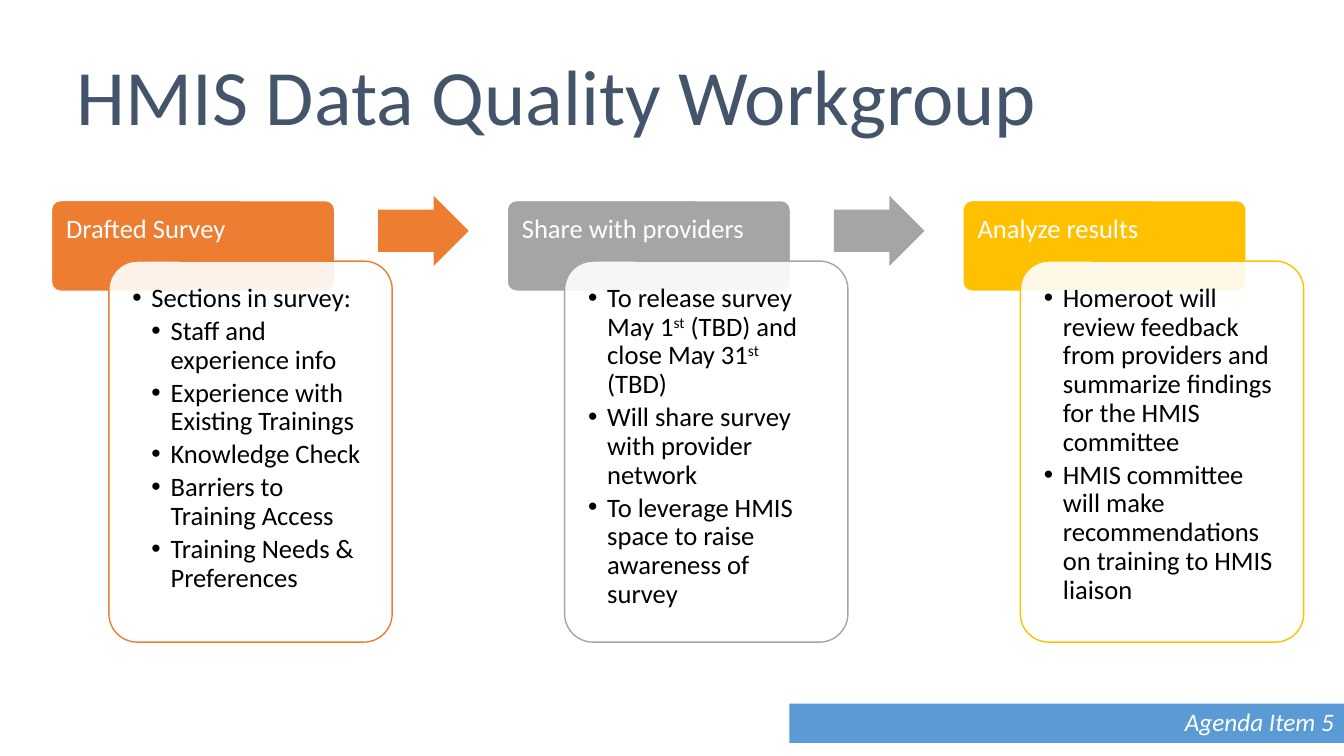
from lxml.etree import SubElement
from pptx import Presentation
from pptx.dml.color import RGBColor
from pptx.enum.shapes import MSO_SHAPE as Shape
from pptx.enum.text import MSO_ANCHOR as Anchor, PP_ALIGN as Align
from pptx.oxml.ns import qn
from pptx.util import Inches, Pt

FONT = "Calibri"
WHITE = RGBColor(0xFF, 0xFF, 0xFF)
BLACK = RGBColor(0x00, 0x00, 0x00)
SLATE = RGBColor(0x44, 0x54, 0x6A)
BLUE = RGBColor(0x5B, 0x9B, 0xD5)
ORANGE = RGBColor(0xED, 0x7D, 0x31)
GRAY = RGBColor(0xA5, 0xA5, 0xA5)
GOLD = RGBColor(0xFF, 0xC0, 0x00)

LEFT, STEP = 0.51, 4.52
HANG = 0.19

# Each point is (level, text); text between carets is superscript.
STAGES = [
    ("Drafted Survey", ORANGE, [
        (0, "Sections in survey:"),
        (1, "Staff and experience info"),
        (1, "Experience with Existing Trainings"),
        (1, "Knowledge Check"),
        (1, "Barriers to Training Access"),
        (1, "Training Needs & Preferences"),
    ]),
    ("Share with providers", GRAY, [
        (0, "To release survey May 1^st^ (TBD) and close May 31^st^ (TBD)"),
        (0, "Will share survey with provider network"),
        (0, "To leverage HMIS space to raise awareness of survey"),
    ]),
    ("Analyze results", GOLD, [
        (0, "Homeroot will review feedback from providers and "
            "summarize findings for the HMIS committee"),
        (0, "HMIS committee will make recommendations on training "
            "to HMIS liaison"),
    ]),
]


def add_box(slide, kind, box, fill, line=None):
    shape = slide.shapes.add_shape(kind, *map(Inches, box))
    shape.shadow.inherit = False
    shape.fill.solid()
    shape.fill.fore_color.rgb = fill
    if line is None:
        shape.line.fill.background()
    else:
        shape.line.color.rgb = line
        shape.line.width = Pt(1)
    return shape


def set_frame(shape, anchor, inset):
    frame = shape.text_frame
    frame.word_wrap = True
    frame.vertical_anchor = anchor
    frame.margin_left = frame.margin_right = Inches(inset)
    frame.margin_top = frame.margin_bottom = Inches(inset)
    return frame


def write(para, text, size, color, align=Align.LEFT, italic=False):
    """Fill a paragraph, raising the parts between carets."""
    para.alignment = align
    para.line_spacing = 0.9
    for i, part in enumerate(text.split("^")):
        run = para.add_run()
        run.text = part
        font = run.font
        font.name, font.size, font.italic = FONT, Pt(size), italic
        font.color.rgb = color
        if i % 2:
            run._r.get_or_add_rPr().set("baseline", "30000")


def set_bullet(para, level):
    para.level = level
    props = para._p.get_or_add_pPr()
    props.set("marL", str(Inches(HANG * (level + 1))))
    props.set("indent", str(-Inches(HANG)))
    SubElement(props, qn("a:buFont"), typeface="Arial")
    SubElement(props, qn("a:buChar"), char="•")


def add_title(slide, text):
    title = slide.shapes.title
    title.left, title.top = Inches(0.66), Inches(0.52)
    title.width, title.height = Inches(12.02), Inches(1.81)
    title.text_frame.word_wrap = True
    title.text_frame.vertical_anchor = Anchor.TOP
    write(title.text_frame.paragraphs[0], text, 56, SLATE)


def add_banner(slide, text):
    bar = add_box(slide, Shape.RECTANGLE, (7.83, 6.98, 5.5, 0.39), BLUE)
    frame = set_frame(bar, Anchor.MIDDLE, 0.1)
    frame.margin_top = frame.margin_bottom = 0
    write(frame.paragraphs[0], text, 18, WHITE, Align.RIGHT, True)


def add_header(slide, left, text, color):
    box = (left, 1.99, 2.81, 0.9)
    head = add_box(slide, Shape.ROUNDED_RECTANGLE, box, color, WHITE)
    head.adjustments[0] = 0.1
    frame = set_frame(head, Anchor.TOP, 0.12)
    write(frame.paragraphs[0], text, 19, WHITE)


def add_card(slide, left, points, color):
    box = (left, 2.59, 2.81, 3.78)
    card = add_box(slide, Shape.ROUNDED_RECTANGLE, box, WHITE, color)
    card.adjustments[0] = 0.1
    tint = card.fill._xPr.find(qn("a:solidFill"))[0]
    SubElement(tint, qn("a:alpha"), val="90000")
    frame = set_frame(card, Anchor.TOP, 0.15)
    for i, (level, text) in enumerate(points):
        para = frame.add_paragraph() if i else frame.paragraphs[0]
        set_bullet(para, level)
        para.space_after = Pt(3)
        write(para, text, 19, BLACK)


def add_arrow(slide, left, color):
    arrow = add_box(slide, Shape.RIGHT_ARROW, (left, 1.94, 0.9, 0.7), color)
    arrow.adjustments[0] = 0.6
    arrow.adjustments[1] = 0.5


def main():
    deck = Presentation()
    deck.slide_width, deck.slide_height = Inches(13.33), Inches(7.5)
    slide = deck.slides.add_slide(deck.slide_layouts[5])
    add_title(slide, "HMIS Data Quality Workgroup")
    add_banner(slide, "Agenda Item 5")
    for i, (name, color, points) in enumerate(STAGES):
        left = LEFT + i * STEP
        add_header(slide, left, name, color)
        add_card(slide, left + 0.57, points, color)
        if i < len(STAGES) - 1:
            add_arrow(slide, left + 3.24, color)
    deck.save("out.pptx")


if __name__ == "__main__":
    main()
